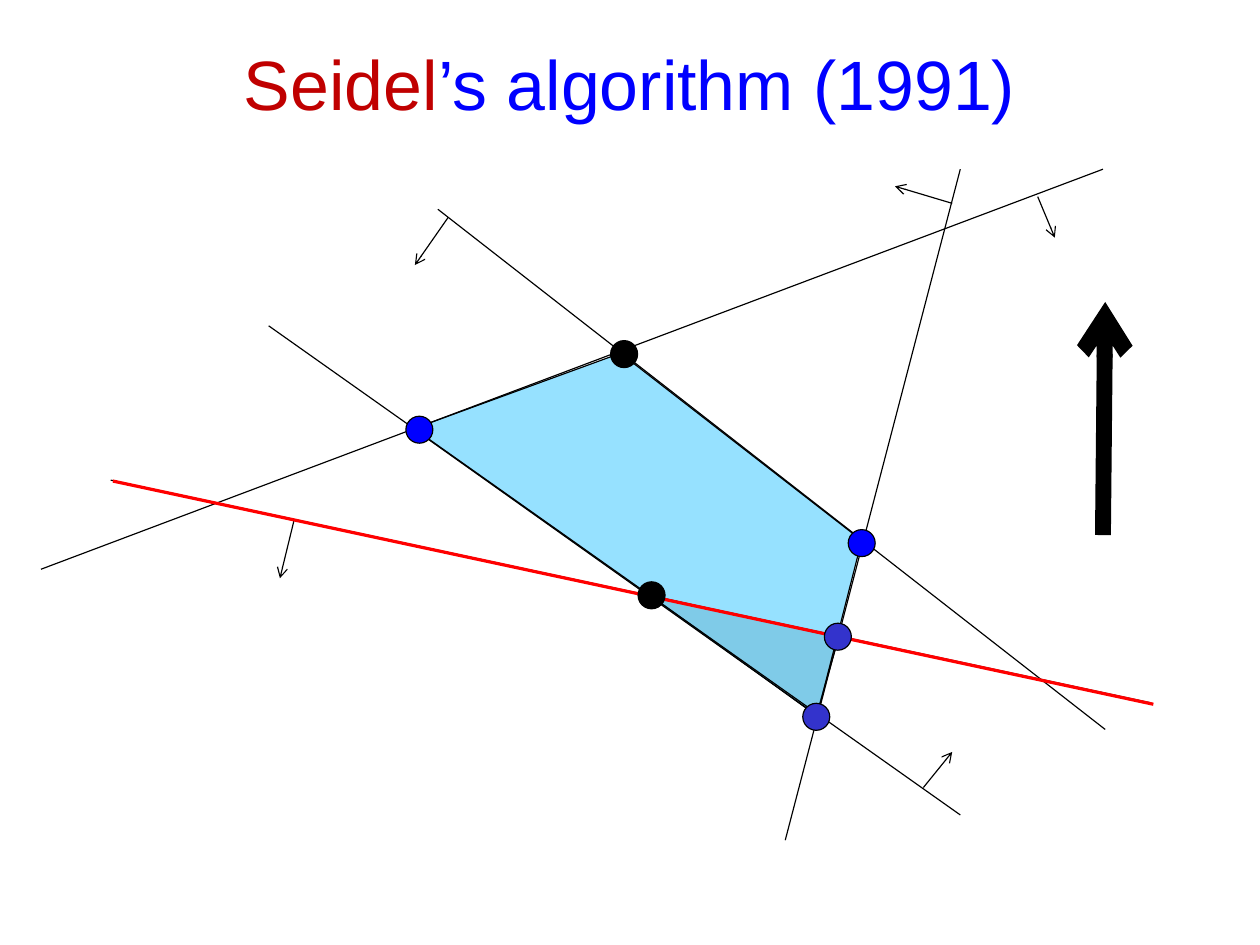
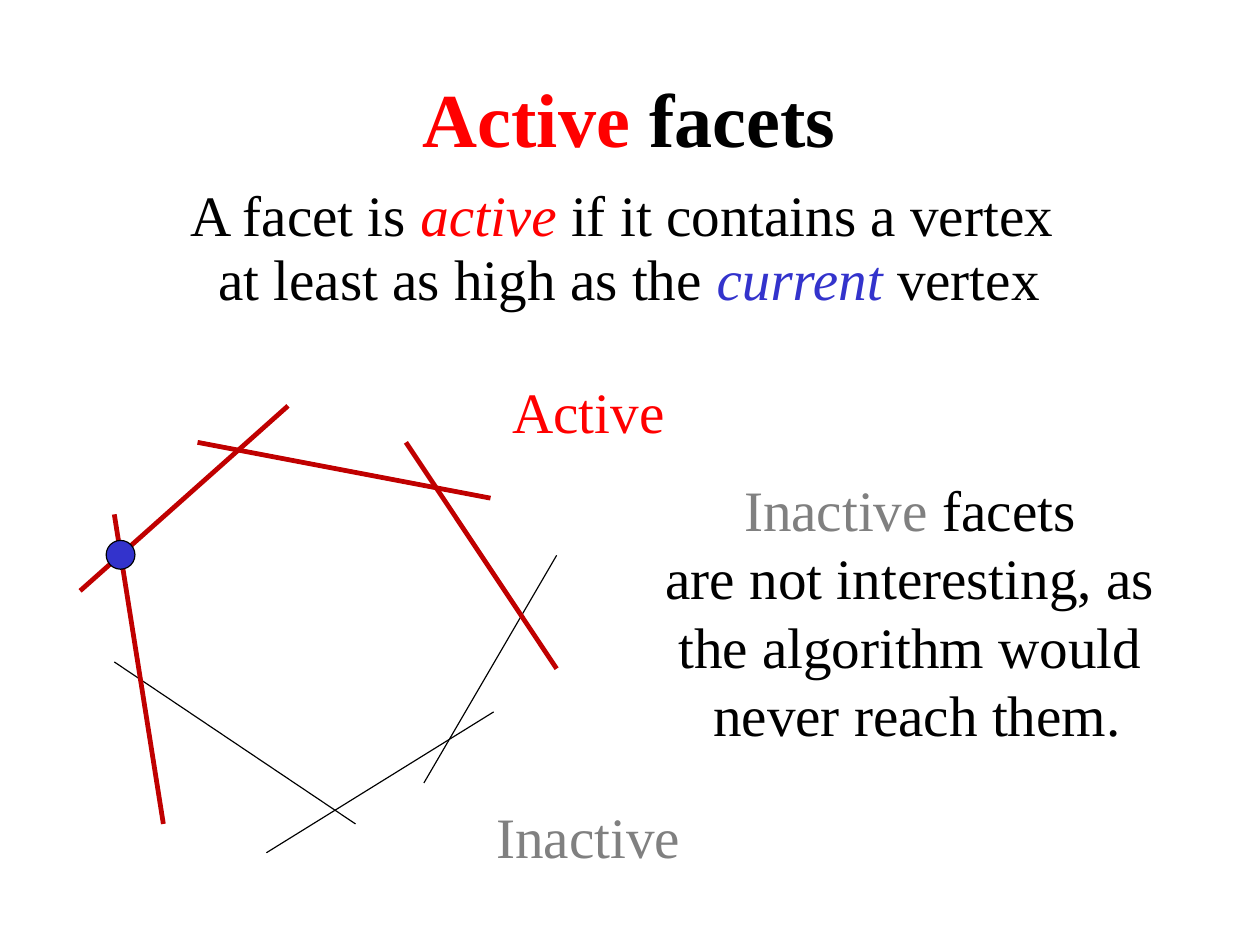
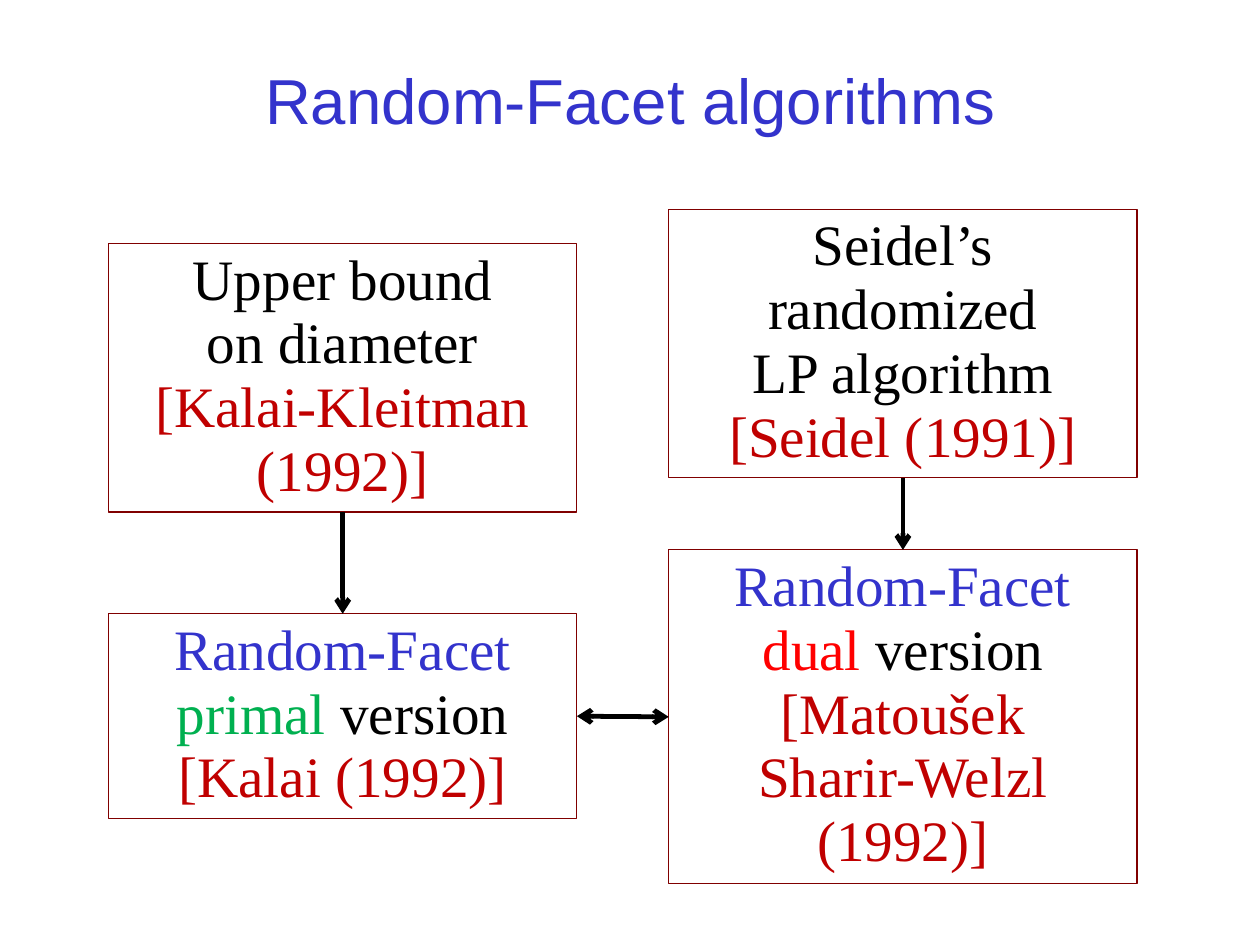
from lxml import etree
from pptx import Presentation, util as u
from pptx.dml.color import RGBColor
from pptx.enum import shapes, text
from pptx.oxml.ns import qn

COLOURS = {
    "black": "000000", "red": "FF0000", "crimson": "C00000", "maroon": "800000",
    "blue": "0000FF", "indigo": "3333CC", "sky": "00B8FF", "green": "00B050",
    "grey": "808080", "silver": "D9D9D9",
}
RGB = {name: RGBColor.from_string(value) for name, value in COLOURS.items()}
SANS, SERIF = "Arial", "Times New Roman"
THIN, THICK = 0.75, 3


def write_text(frame, paragraphs, size=36, font=SERIF, spacing=None, gap=0,
               anchor=text.MSO_ANCHOR.TOP, inset=None):
    """Each paragraph is a list of (text, colour, style); style holds b and/or i."""
    frame.word_wrap = True
    frame.vertical_anchor = anchor
    if inset is not None:
        frame.margin_left = frame.margin_right = u.Cm(inset)
        frame.margin_top = frame.margin_bottom = u.Cm(inset)
    for index, runs in enumerate(paragraphs):
        paragraph = frame.add_paragraph() if index else frame.paragraphs[0]
        paragraph.alignment = text.PP_ALIGN.CENTER
        paragraph.line_spacing = spacing
        paragraph.space_before = u.Pt(gap if index else 0)
        for words, colour, *style in runs:
            for number, line in enumerate(words.split("\n")):
                if number:
                    paragraph.add_line_break()
                if line:
                    run = paragraph.add_run()
                    run.text = line
                    run.font.name = font
                    run.font.size = u.Pt(48 if "b" in style else size)
                    run.font.bold = "b" in style
                    run.font.italic = "i" in style
                    run.font.color.rgb = RGB[colour]


def draw_line(slide, start, end, colour="black", width=THIN, arrows=()):
    line = slide.shapes.add_connector(
        shapes.MSO_CONNECTOR.STRAIGHT, *(u.Cm(value) for value in (*start, *end)))
    line.line.color.rgb = RGB[colour]
    line.line.width = u.Pt(width)
    properties = line.element.spPr
    for arrow in arrows:
        etree.SubElement(properties.find(qn("a:ln")), qn(f"a:{arrow}"), type="arrow")
    etree.SubElement(properties, qn("a:effectLst"))
    return line


deck = Presentation()
deck.slide_width, deck.slide_height = u.Cm(28), u.Cm(21)
seidel, active, random_facet = (
    deck.slides.add_slide(deck.slide_layouts[6]) for _ in range(3))

# Shared title style
for slide, top, height, size, runs in [
    (seidel, 0.89, 1.88, 44, [("Seidel", "crimson"), ("’s algorithm (1991)", "blue")]),
    (random_facet, 1.35, 1.7, 40, [("Random-Facet algorithms", "indigo")]),
]:
    title = slide.shapes.add_textbox(0, u.Cm(top), deck.slide_width, u.Cm(height))
    write_text(title.text_frame, [runs], size=size, font=SANS,
               anchor=text.MSO_ANCHOR.MIDDLE, inset=0)

# Seidel: removed corner and feasible region
for corners, colour, opacity in [
    ([(14.45, 13.23), (18.64, 14.17), (18.14, 15.9)], "silver", 100),
    ([(18.16, 15.9), (19.15, 12.01), (13.79, 7.85), (9.19, 9.53)], "sky", 41),
]:
    points = [(u.Cm(x), u.Cm(y)) for x, y in corners]
    outline = seidel.shapes.build_freeform(*points[0])
    outline.add_line_segments(points[1:], close=True)
    region = outline.convert_to_shape()
    region.shadow.inherit = False
    region.fill.solid()
    region.fill.fore_color.rgb = RGB[colour]
    region.line.color.rgb = RGB["black"]
    region.line.width = u.Pt(THIN)
    if opacity < 100:
        tint = region.element.spPr.find(qn("a:solidFill"))[0]
        etree.SubElement(tint, qn("a:alpha"), val=str(opacity * 1000))

# Seidel: constraints, each with the arrow to its feasible side
for start, end, foot, tip in [
    ((17.45, 18.67), (21.34, 3.76), (21.16, 4.52), (19.89, 4.14)),
    ((9.73, 4.65), (24.56, 16.21), (9.96, 4.83), (9.22, 5.89)),
    ((0.91, 12.65), (24.51, 3.76), (23.06, 4.37), (23.44, 5.28)),
    ((2.46, 10.67), (25.58, 15.62), (6.53, 11.58), (6.22, 12.85)),
    ((21.34, 18.11), (5.97, 7.24), (20.52, 17.5), (21.16, 16.71)),
]:
    draw_line(seidel, start, end)
    draw_line(seidel, foot, tip, arrows=["tailEnd"])

# Seidel: objective direction and the new constraint
draw_line(seidel, (24.51, 11.89), (24.56, 6.71), width=10, arrows=["tailEnd"])
draw_line(seidel, (2.51, 10.69), (25.63, 15.65), "red", 2)

# Active facets: heading and definition
definition = active.shapes.add_textbox(u.Cm(2.03), u.Cm(1.65), u.Cm(23.9), u.Cm(5.51))
write_text(definition.text_frame, [
    [("Active", "red", "b"), (" facets", "black", "b")],
    [("A facet is ", "black"), ("active", "red", "i"),
     (" if it contains a vertex \nat least as high as the ", "black"),
     ("current", "indigo", "i"), (" vertex", "black")],
], spacing=0.93, gap=13)

# Active facets: inactive facets thin, active ones thick
for colour, width, facets in [
    ("black", THIN, [((7.9, 18.31), (2.54, 14.71)),
                     ((10.97, 15.82), (5.92, 18.95)),
                     ((12.37, 12.34), (9.42, 17.4))]),
    ("crimson", THICK, [((3.63, 18.31), (2.54, 11.43)),
                        ((6.4, 9.02), (1.78, 13.13)),
                        ((10.9, 11.07), (4.39, 9.83)),
                        ((12.37, 14.86), (9.02, 9.83))]),
]:
    for start, end in facets:
        draw_line(active, start, end, colour, width)

# Active facets: labels and remark
for left, top, width, height, runs in [
    (5.05, 8.23, 16.05, 1.8, [("Active", "red")]),
    (13.18, 10.41, 14.4, 6.4, [
        ("Inactive ", "grey"),
        ("facets \nare not interesting, as \nthe algorithm would \nnever reach them.",
         "black")]),
    (5.05, 17.68, 16.05, 1.8, [("Inactive", "grey")]),
]:
    remark = active.shapes.add_textbox(u.Cm(left), u.Cm(top), u.Cm(width), u.Cm(height))
    write_text(remark.text_frame, [runs])

# Vertices on both drawings, placed by their centres
for slide, x, y, diameter, colour in [
    (seidel, 18.14, 15.93, 0.6, "indigo"),
    (seidel, 13.87, 7.87, 0.6, "black"),
    (seidel, 9.32, 9.55, 0.6, "blue"),
    (seidel, 19.15, 12.07, 0.6, "blue"),
    (seidel, 14.48, 13.23, 0.6, "black"),
    (seidel, 18.62, 14.15, 0.6, "indigo"),
    (active, 2.68, 12.33, 0.64, "indigo"),
]:
    vertex = slide.shapes.add_shape(
        shapes.MSO_SHAPE.OVAL, u.Cm(x - diameter / 2), u.Cm(y - diameter / 2),
        u.Cm(diameter), u.Cm(diameter))
    vertex.shadow.inherit = False
    vertex.fill.solid()
    vertex.fill.fore_color.rgb = RGB[colour]
    vertex.line.color.rgb = RGB["black"]
    vertex.line.width = u.Pt(THIN)

# Random-Facet: the four results
LEFT, RIGHT = 2.41, 14.86
results = {}
for key, left, top, height, paragraphs in [
    ("diameter", LEFT, 5.41, 5.97, [
        [("Upper bound\non diameter\n", "black"),
         ("[Kalai-Kleitman (1992)]", "crimson")]]),
    ("primal", LEFT, 13.64, 4.55, [
        [("Random-Facet\n", "indigo"), ("primal", "green"),
         (" version\n", "black"), ("[Kalai (1992)]", "crimson")]]),
    ("lp", RIGHT, 4.65, 5.97, [
        [("Seidel’s randomized\nLP algorithm\n", "black"),
         ("[Seidel (1991)]", "crimson")]]),
    ("dual", RIGHT, 12.22, 7.42, [
        [("Random-Facet\n", "indigo"), ("dual", "red"),
         (" version\n", "black"), ("[Matoušek", "crimson")],
        [("Sharir-Welzl (1992)]", "crimson")]]),
]:
    result = random_facet.shapes.add_shape(
        shapes.MSO_SHAPE.RECTANGLE, u.Cm(left), u.Cm(top), u.Cm(10.41), u.Cm(height))
    result.shadow.inherit = False
    result.fill.background()
    result.line.color.rgb = RGB["maroon"]
    result.line.width = u.Pt(THIN)
    write_text(result.text_frame, paragraphs, spacing=0.93)
    results[key] = result

# Random-Facet: how the results are linked
for source, side, target, target_side, arrows in [
    ("diameter", 2, "primal", 0, ["tailEnd"]),
    ("lp", 2, "dual", 0, ["tailEnd"]),
    ("primal", 3, "dual", 1, ["headEnd", "tailEnd"]),
]:
    link = draw_line(random_facet, (0, 0), (1, 1), width=THICK, arrows=arrows)
    link.begin_connect(results[source], side)
    link.end_connect(results[target], target_side)

deck.save("out.pptx")
